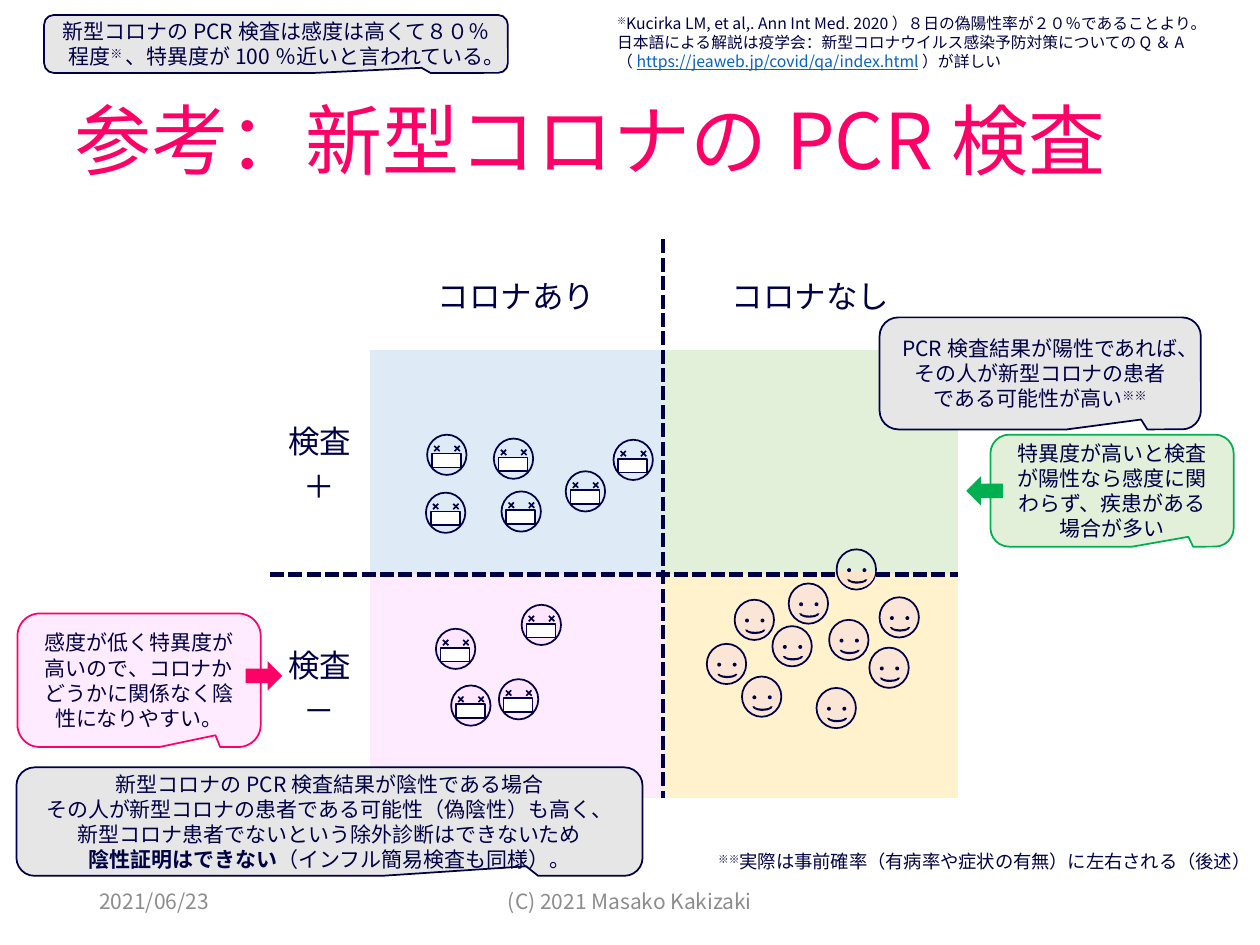
from pptx import Presentation
from pptx.dml.color import RGBColor
from pptx.enum.shapes import MSO_SHAPE as Shape
from pptx.enum.text import MSO_ANCHOR as Anchor, PP_ALIGN as Align
from pptx.oxml import parse_xml
from pptx.oxml.ns import nsdecls
from pptx.util import Pt

FONT = "Noto Sans CJK JP"
NAVY, PINK, GREEN, GREY, LINK = "000046", "FF0066", "00B050", "8C8C8C", "0563C1"
PALE_BLUE, PALE_GREEN, PALE_PINK = "DEEBF7", "E2F0D9", "FFEBFF"
PALE_YELLOW, PALE_GREY = "FFF2CC", "E7E6E6"
MASK_PINK, SKIN, WARM = "FFE5FF", "FBE5D6", "FFE4C9"
NO_GRID_STYLE = "{2D5ABB26-0587-4C30-8999-92F81FD0307C}"

SICK_POSITIVE = [(282.2, 250.6), (244.1, 248.4), (323.3, 269.3),
                 (243.4, 281.5), (286.6, 280.8), (350.6, 251.3)]
SICK_NEGATIVE = [(249.1, 359.3), (298.1, 345.6), (285.1, 388.1), (257.8, 391.7)]
HEALTHY = [(424, 386.6), (441.4, 357.8), (403.9, 367.9), (419.8, 342.7),
           (466.6, 393.1), (496.8, 370.1), (473.8, 354.2), (502.6, 341.3),
           (450.7, 333.4)]
FALSE_POSITIVE = (478.1, 313.9)


def color(value):
    return RGBColor.from_string(value)


def write(frame, paras, size=12, ink=NAVY, align=Align.CENTER,
          anchor=Anchor.MIDDLE, wrap=True, spacing=None):
    """Each paragraph is a string or a list of (text, format) spans."""
    frame.word_wrap = wrap
    frame.vertical_anchor = anchor
    for index, content in enumerate(paras):
        para = frame.paragraphs[0] if index == 0 else frame.add_paragraph()
        para.alignment = align
        if spacing:
            para.line_spacing = spacing
        spans = [(content, {})] if isinstance(content, str) else content
        for text, style in spans:
            add_span(para, text, **{"size": size, "ink": ink, **style})


def add_span(para, text, size, ink, bold=None, underline=None, raised=False):
    span = para.add_run()
    span.text = text
    font = span.font
    font.size, font.bold, font.underline = Pt(size), bold, underline
    font.name = FONT
    font.color.rgb = color(ink)
    props = font._element
    props.append(parse_xml(f'<a:ea {nsdecls("a")} typeface="{FONT}"/>'))
    if raised:
        props.set("baseline", "30000")


def add_text(page, at, paras, **style):
    box = page.shapes.add_textbox(*map(Pt, at))
    write(box.text_frame, paras, **style)


def add_figure(shapes, kind, at, fill=None, line=None, turn=0, adjust=()):
    figure = shapes.add_shape(kind, *map(Pt, at))
    figure.shadow.inherit = False
    figure.rotation = turn
    for index, value in enumerate(adjust):
        figure.adjustments[index] = value
    if fill:
        figure.fill.solid()
        figure.fill.fore_color.rgb = color(fill)
    else:
        figure.fill.background()
    if line:
        figure.line.color.rgb = color(line)
        figure.line.width = Pt(1)
    else:
        figure.line.fill.background()
    return figure


def add_callout(page, at, paras, fill=None, line=None, size=12):
    callout = add_figure(page.shapes, Shape.ROUNDED_RECTANGULAR_CALLOUT, at,
                         fill, line, adjust=(0.314, 0.412, 0.167))
    write(callout.text_frame, paras, size=size)


def add_head(page, x, y, fill):
    """Return the shapes of a new group that holds the round head."""
    shapes = page.shapes.add_group_shape().shapes
    add_figure(shapes, Shape.OVAL, (x, y, 22.5, 23), fill, NAVY)
    return shapes


def add_masked_face(page, x, y, fill):
    shapes = add_head(page, x, y, fill)
    add_figure(shapes, Shape.RECTANGLE, (x + 2.7, y + 10.8, 16.6, 7.9), "FFFFFF", NAVY)
    for eye in (3.4, 15):
        add_figure(shapes, Shape.CROSS, (x + eye, y + 5.8, 4.3, 4.3), NAVY,
                   turn=43.8, adjust=(0.389,))


def add_smiling_face(page, x, y, fill, chin=None):
    shapes = add_head(page, x, y, fill)
    if chin:
        add_figure(shapes, Shape.PIE, (x + 0.6, y + 2.9, 21.4, 19.4), chin,
                   adjust=(0, 107.486))
    for eye in (6, 14.8):
        add_figure(shapes, Shape.OVAL, (x + eye, y + 10.8, 2.2, 2.2), NAVY)
    add_figure(shapes, Shape.BLOCK_ARC, (x + 6, y + 14.6, 11.5, 5), NAVY, turn=180)


def add_borders(cell, sides):
    """Dash the given sides, listed in the order L, R, T, B."""
    props = cell._tc.get_or_add_tcPr()
    for index, side in enumerate(sides):
        props.insert(index, parse_xml(
            f'<a:ln{side} {nsdecls("a")} w="{Pt(3)}"><a:solidFill>'
            f'<a:srgbClr val="{NAVY}"/></a:solidFill>'
            f'<a:prstDash val="sysDash"/></a:ln{side}>'))


def add_outcome_table(page):
    words = [[[], ["コロナあり"], ["コロナなし"]],
             [["検査", "＋"], [], []],
             [["検査", "－"], [], []]]
    fills = {(1, 1): PALE_BLUE, (1, 2): PALE_GREEN,
             (2, 1): PALE_PINK, (2, 2): PALE_YELLOW}
    column_sides, row_sides = ["", "R", "L"], ["", "B", "T"]
    widths, heights = (57, 167.8, 168.5), (63.4, 128, 128)
    frame = page.shapes.add_table(3, 3, Pt(154.2), Pt(136.8),
                                  Pt(sum(widths)), Pt(sum(heights)))
    table = frame.table
    table.first_row = table.horz_banding = False
    table._tbl.tblPr[0].text = NO_GRID_STYLE
    for column, width in zip(table.columns, widths):
        column.width = Pt(width)
    for row, height in zip(table.rows, heights):
        row.height = Pt(height)
    for r, line in enumerate(words):
        for c, paras in enumerate(line):
            cell = table.cell(r, c)
            if (r, c) in fills:
                cell.fill.solid()
                cell.fill.fore_color.rgb = color(fills[r, c])
            else:
                cell.fill.background()
            add_borders(cell, column_sides[c] + row_sides[r])
            if paras:
                write(cell.text_frame, paras, size=18)
                cell.vertical_anchor = Anchor.MIDDLE


def add_faces(page):
    for spots, fill in ((SICK_POSITIVE, PALE_BLUE), (SICK_NEGATIVE, MASK_PINK)):
        for x, y in spots:
            add_masked_face(page, x, y, fill)
    for x, y in HEALTHY:
        add_smiling_face(page, x, y, SKIN)
    add_smiling_face(page, *FALSE_POSITIVE, PALE_GREEN, chin=WARM)


def add_callouts(page):
    raised = {"raised": True}
    add_callout(page, (25.2, 8.6, 265, 33.1),
                [[("新型コロナのPCR検査は感度は高くて８０％程度", {}), ("※ ", raised),
                  ("、特異度が100％近いと言われている。", {})]], PALE_GREY, NAVY)
    add_callout(page, (566, 248.4, 139, 64),
                ["特異度が高いと検査が陽性なら感度に関わらず、疾患がある場合が多い"],
                PALE_GREEN, GREEN)
    add_figure(page.shapes, Shape.LEFT_ARROW, (552.2, 272.2, 20.9, 16.6), GREEN)
    add_callout(page, (502.6, 181.4, 183.6, 64),
                ["PCR検査結果が陽性であれば、", "その人が新型コロナの患者",
                 [("である可能性が高い", {}), ("※※", raised)]], PALE_GREY, NAVY)
    add_callout(page, (10, 350.6, 139, 76.3),
                ["感度が低く特異度が高いので、コロナかどうかに関係なく陰性になりやすい。"],
                PALE_PINK, PINK)
    add_figure(page.shapes, Shape.RIGHT_ARROW, (140.4, 378, 20.9, 16.6), PINK)
    add_callout(page, (9.4, 438.5, 357.8, 62),
                ["新型コロナのPCR検査結果が陰性である場合",
                 "その人が新型コロナの患者である可能性（偽陰性）も高く、",
                 "新型コロナ患者でないという除外診断はできないため",
                 [("陰性証明はできない", {"bold": True}),
                  ("（インフル簡易検査も同様）。", {})]], PALE_GREY, NAVY)
    add_callout(page, (396, 467.3, 333.4, 49.7),
                [[("※※", raised),
                  ("実際は事前確率（有病率や症状の有無）に左右される（後述）", {})]], size=10.5)


def main():
    deck = Presentation()
    deck.slide_width, deck.slide_height = Pt(720), Pt(540)
    page = deck.slides.add_slide(deck.slide_layouts[6])
    add_outcome_table(page)
    add_text(page, (35.3, 30.2, 648, 104.4), ["参考：新型コロナのPCR検査"],
             size=44, ink=PINK, align=Align.LEFT, spacing=0.9)
    add_text(page, (49.7, 500.4, 162, 28.8), ["2021/06/23"], ink=GREY, align=Align.LEFT)
    add_text(page, (238.3, 500.4, 243.4, 28.8), ["(C) 2021 Masako Kakizaki"], ink=GREY)
    add_faces(page)
    add_callouts(page)
    add_text(page, (345.6, 4.3, 371.5, 40.3),
             [[("※", {"raised": True}),
               ("Kucirka LM, et al,. Ann Int Med. 2020）８日の偽陽性率が２０％であることより。", {})],
              "日本語による解説は疫学会：新型コロナウイルス感染予防対策についてのQ＆A",
              [("（", {}),
               ("https://jeaweb.jp/covid/qa/index.html", {"ink": LINK, "underline": True}),
               ("）が詳しい", {})]],
             size=9, align=Align.LEFT, anchor=Anchor.TOP, wrap=False)
    deck.save("out.pptx")


if __name__ == "__main__":
    main()
